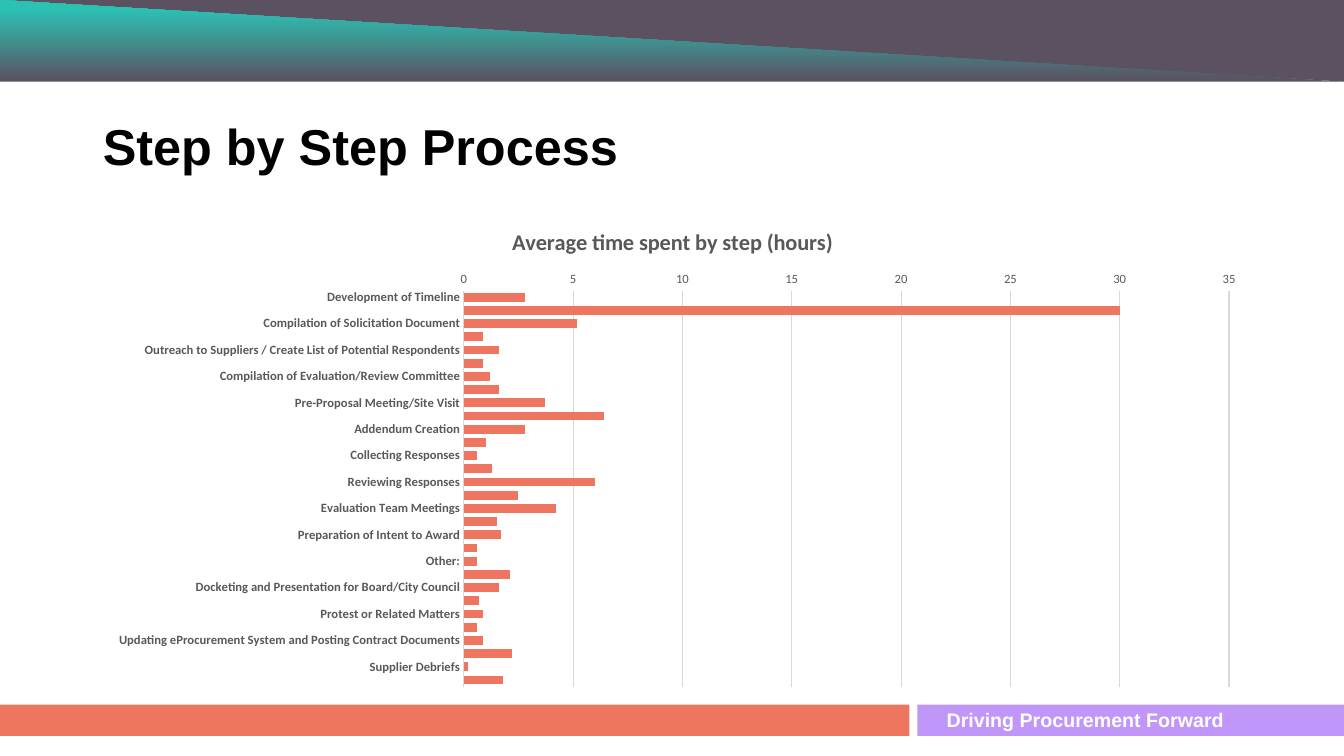
from dataclasses import dataclass

from lxml.etree import SubElement
from pptx import Presentation
from pptx.chart.data import CategoryChartData
from pptx.dml.color import RGBColor
from pptx.enum.chart import XL_CHART_TYPE as ChartType, XL_TICK_MARK as TickMark
from pptx.enum.shapes import MSO_SHAPE as Shape
from pptx.enum.text import MSO_ANCHOR as Anchor, MSO_AUTO_SIZE as AutoSize, PP_ALIGN as Align
from pptx.oxml.ns import qn
from pptx.util import Inches, Pt


@dataclass(frozen=True)
class Theme:
    plum: str = "5B5160"
    teal: str = "2BC2B4"
    coral: str = "EE7660"
    lilac: str = "C097F8"
    white: str = "FFFFFF"
    black: str = "000000"
    label: str = "595959"
    grid: str = "D9D9D9"
    font: str = "Arial"
    chart_font: str = "Calibri"
    title_size: int = 36
    chart_title_size: int = 16
    footer_size: int = 14
    axis_size: int = 9


@dataclass(frozen=True)
class Block:
    kind: Shape
    left: float
    top: float
    width: float
    height: float
    fill: str
    fade_to: str = ""
    rotation: int = 0


@dataclass(frozen=True)
class Step:
    name: str
    hours: float


THEME = Theme()
SLIDE_W, BAND_H = 13.33, 0.81

BLOCKS = [
    Block(Shape.RIGHT_TRIANGLE, 0, 0, SLIDE_W, BAND_H, THEME.plum, rotation=180),
    Block(Shape.RIGHT_TRIANGLE, 0, 0, SLIDE_W, BAND_H, THEME.plum, fade_to=THEME.teal),
    Block(Shape.RECTANGLE, 0, 6.99, 9.02, 0.31, THEME.coral),
    Block(Shape.RECTANGLE, 9.1, 6.99, 4.23, 0.31, THEME.lilac),
]

STEPS = [
    Step("Development of Timeline", 2.8),
    Step("Development of Specifications and Scope of Work", 30),
    Step("Compilation of Solicitation Document", 5.2),
    Step("Uploading to eProcurement System", 0.9),
    Step("Outreach to Suppliers / Create List of Potential Respondents", 1.6),
    Step("Advertising", 0.9),
    Step("Compilation of Evaluation/Review Committee", 1.2),
    Step("Other:", 1.6),
    Step("Pre-Proposal Meeting/Site Visit", 3.7),
    Step("Collect and Answer Questions", 6.4),
    Step("Addendum Creation", 2.8),
    Step("Mailing/Emailing suppliers", 1),
    Step("Collecting Responses", 0.6),
    Step("Response Opening", 1.3),
    Step("Reviewing Responses", 6),
    Step("Preparation for Evaluation Meetings", 2.5),
    Step("Evaluation Team Meetings", 4.2),
    Step("Product Demos or Interviews", 1.5),
    Step("Preparation of Intent to Award", 1.7),
    Step("Communications with Suppliers", 0.6),
    Step("Other:", 0.6),
    Step("Contract Negotiation", 2.1),
    Step("Docketing and Presentation for Board/City Council", 1.6),
    Step("Notification to All Suppliers", 0.7),
    Step("Protest or Related Matters", 0.9),
    Step("Contract Announcement", 0.6),
    Step("Updating eProcurement System and Posting Contract Documents", 0.9),
    Step("Training/Roll-out of New Contract", 2.2),
    Step("Supplier Debriefs", 0.2),
    Step("Other:", 1.8),
]


def rgb(value: str) -> RGBColor:
    return RGBColor.from_string(value)


def style_font(font, name: str, size: int, color: str, bold: bool) -> None:
    font.name, font.size, font.bold = name, Pt(size), bold
    font.color.rgb = rgb(color)


def add_block(s, block: Block) -> None:
    box = map(Inches, (block.left, block.top, block.width, block.height))
    sp = s.shapes.add_shape(block.kind, *box)
    sp.rotation = block.rotation
    sp.shadow.inherit = False
    sp.line.fill.background()
    if block.fade_to:
        sp.fill.gradient()
        sp.fill.gradient_angle = 90
        stops = zip(sp.fill.gradient_stops, (0, 0.9), (block.fill, block.fade_to))
        for stop, position, color in stops:
            stop.position = position
            stop.color.rgb = rgb(color)
    else:
        sp.fill.solid()
        sp.fill.fore_color.rgb = rgb(block.fill)


def add_title(s, text: str) -> None:
    sp = s.shapes.title
    sp.left, sp.top, sp.width, sp.height = map(Inches, (0.92, 0.97, 11.5, 1.02))
    tf = sp.text_frame
    tf.text = text
    tf.auto_size = AutoSize.NONE
    tf.vertical_anchor = Anchor.MIDDLE
    p = tf.paragraphs[0]
    p.alignment, p.line_spacing = Align.LEFT, 0.9
    style_font(p.font, THEME.font, THEME.title_size, THEME.black, True)


def add_footer(s, text: str) -> None:
    sp = s.shapes.add_textbox(*map(Inches, (9.29, 6.97, 3.31, 0.34)))
    tf = sp.text_frame
    tf.word_wrap = True
    tf.text = text
    style_font(tf.paragraphs[0].font, THEME.font, THEME.footer_size, THEME.white, True)


def style_axis(axis, bold: bool) -> None:
    axis.major_tick_mark = axis.minor_tick_mark = TickMark.NONE
    style_font(axis.tick_labels.font, THEME.chart_font, THEME.axis_size, THEME.label, bold)


def place_plot(chart, x: float, y: float, w: float, h: float) -> None:
    """Fix the inner plot area, in fractions of the chart frame."""
    area = chart._chartSpace.chart.plotArea
    for old in area.findall(qn("c:layout")):
        area.remove(old)
    layout = SubElement(area, qn("c:layout"))
    area.insert(0, layout)
    manual = SubElement(layout, qn("c:manualLayout"))
    settings = {"layoutTarget": "inner", "xMode": "edge", "yMode": "edge",
                "x": x, "y": y, "w": w, "h": h}
    for tag, value in settings.items():
        SubElement(manual, qn(f"c:{tag}")).set("val", str(value))


def add_hours_chart(s, title: str, steps: list[Step]) -> None:
    data = CategoryChartData()
    data.categories = [step.name for step in steps]
    data.add_series("Series 1", [step.hours for step in steps])
    frame = map(Inches, (0.92, 2.06, 11.5, 4.85))
    chart = s.shapes.add_chart(ChartType.BAR_CLUSTERED, *frame, data).chart
    style_font(chart.font, THEME.chart_font, 10, THEME.black, False)
    chart.has_legend = False
    place_plot(chart, 0.32, 0.17, 0.66, 0.81)

    # Chart title
    chart.has_title = True
    tf = chart.chart_title.text_frame
    tf.text = title
    style_font(tf.paragraphs[0].font, THEME.chart_font, THEME.chart_title_size, THEME.label, True)

    # Bars
    plot = chart.plots[0]
    plot.gap_width, plot.vary_by_categories = 50, False
    fill = plot.series[0].format.fill
    fill.solid()
    fill.fore_color.rgb = rgb(THEME.coral)

    # Axes
    steps_axis, hours_axis = chart.category_axis, chart.value_axis
    style_axis(steps_axis, True)
    style_axis(hours_axis, False)
    steps_axis.reverse_order = True
    hours_axis.minimum_scale, hours_axis.maximum_scale, hours_axis.major_unit = 0, 35, 5
    hours_axis.tick_labels.number_format = "0"
    hours_axis.tick_labels.number_format_is_linked = False
    hours_axis.format.line.fill.background()
    for line in (steps_axis.format.line, hours_axis.major_gridlines.format.line):
        line.width = Pt(0.75)
        line.color.rgb = rgb(THEME.grid)


def main() -> None:
    prs = Presentation()
    prs.slide_width, prs.slide_height = Inches(SLIDE_W), Inches(7.5)
    s = prs.slides.add_slide(prs.slide_layouts[5])
    # Header band and footer bars
    for block in BLOCKS:
        add_block(s, block)
    add_footer(s, "Driving Procurement Forward")
    # Content
    add_title(s, "Step by Step Process")
    add_hours_chart(s, "Average time spent by step (hours)", STEPS)
    prs.save("out.pptx")


if __name__ == "__main__":
    main()
